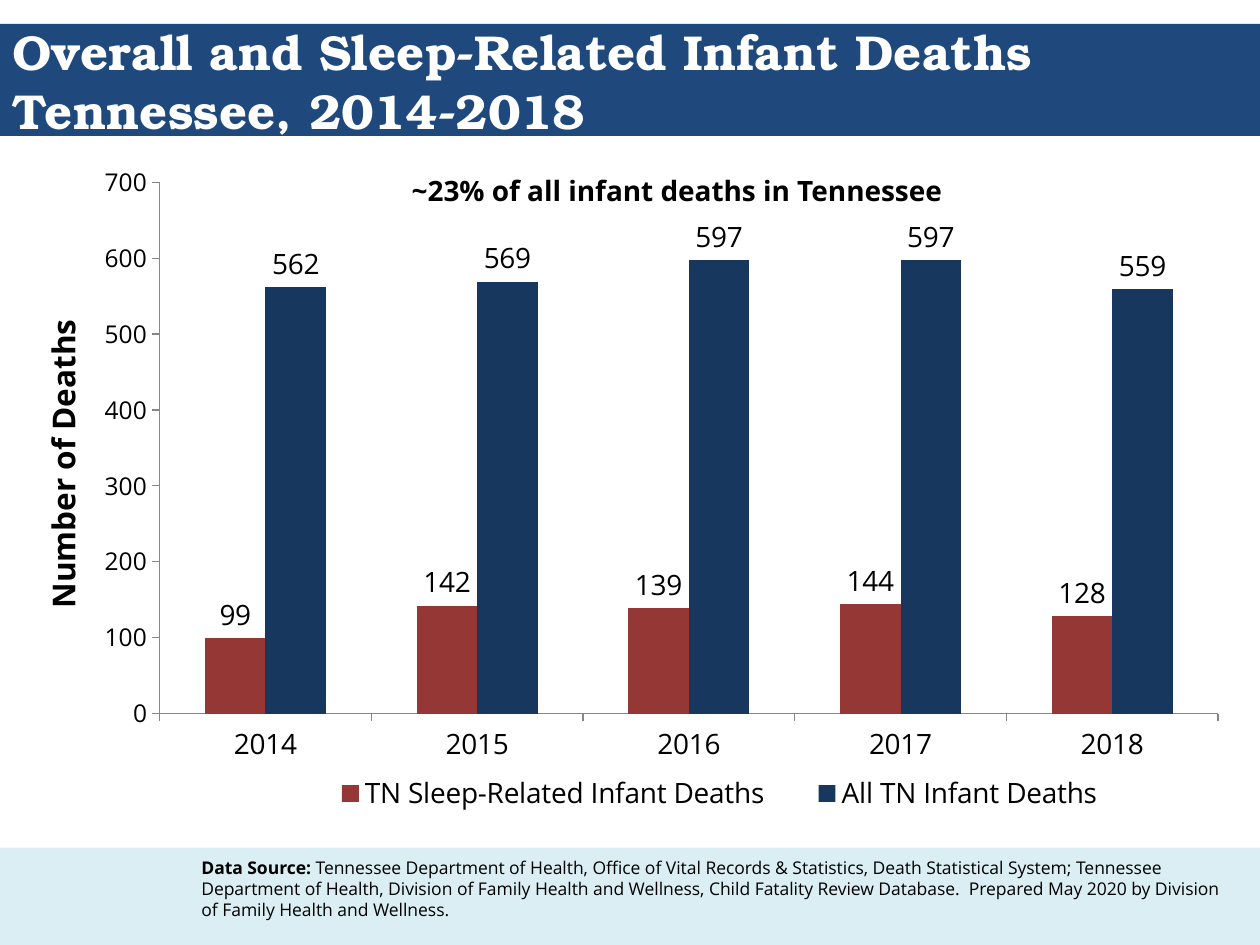
from dataclasses import dataclass

from lxml.etree import SubElement
from pptx import Presentation
from pptx.chart.data import CategoryChartData
from pptx.dml.color import RGBColor
from pptx.enum.chart import (XL_CHART_TYPE, XL_LABEL_POSITION,
                             XL_LEGEND_POSITION, XL_TICK_MARK)
from pptx.enum.shapes import MSO_SHAPE
from pptx.enum.text import MSO_ANCHOR
from pptx.oxml.ns import qn
from pptx.util import Cm, Pt


@dataclass(frozen=True)
class Theme:
    banner: str = "1F497D"
    footer: str = "DBEEF4"
    white: str = "FFFFFF"
    black: str = "000000"
    axis: str = "868686"
    sleep: str = "953735"
    overall: str = "17375E"
    heading: str = "TeX Gyre Bonum"
    body: str = "Open Sans"
    title_size: int = 28
    axis_title_size: int = 18
    label_size: int = 16
    tick_size: int = 14
    source_size: int = 10


THEME = Theme()
BREAK = "\v"

YEARS = ["2014", "2015", "2016", "2017", "2018"]
SERIES = [
    ("TN Sleep-Related Infant Deaths", [99, 142, 139, 144, 128], THEME.sleep),
    ("All TN Infant Deaths", [562, 569, 597, 597, 559], THEME.overall),
]


def style_font(font, size, name=THEME.body, bold=False, color=THEME.black):
    values = {"name": name, "size": Pt(size), "bold": bold}
    for key, value in values.items():
        setattr(font, key, value)
    font.color.rgb = RGBColor.from_string(color)


def add_band(slide, top, height, color):
    """Draw a plain strip across the full slide width."""
    s = slide.shapes.add_shape(MSO_SHAPE.RECTANGLE, 0, Cm(top), Cm(25.4), Cm(height))
    s.shadow.inherit = False
    s.fill.solid()
    s.fill.fore_color.rgb = RGBColor.from_string(color)
    s.line.fill.background()


def add_text(slide, box, runs, size, anchor=MSO_ANCHOR.TOP, **font):
    """Add one paragraph made of (text, bold) runs; BREAK starts a new line."""
    tf = slide.shapes.add_textbox(*(Cm(v) for v in box)).text_frame
    tf.word_wrap = True
    tf.vertical_anchor = anchor
    p = tf.paragraphs[0]
    for text, bold in runs:
        if text == BREAK:
            p.add_line_break()
            continue
        r = p.add_run()
        r.text = text
        style_font(r.font, size, bold=bold, **font)


def set_layout(parent, index, x, y, w, h, inner=False):
    """Place a chart part by fractions of the chart's size."""
    for old in parent.findall(qn("c:layout")):
        parent.remove(old)
    layout = SubElement(parent, qn("c:layout"))
    parent.insert(index, layout)
    manual = SubElement(layout, qn("c:manualLayout"))
    values = {"layoutTarget": "inner"} if inner else {}
    values |= {"xMode": "edge", "yMode": "edge", "x": x, "y": y, "w": w, "h": h}
    for tag, value in values.items():
        SubElement(manual, qn(f"c:{tag}")).set("val", str(value))


def style_axis(axis, size):
    values = {"has_major_gridlines": False, "major_tick_mark": XL_TICK_MARK.OUTSIDE,
              "minor_tick_mark": XL_TICK_MARK.NONE}
    for key, value in values.items():
        setattr(axis, key, value)
    style_font(axis.tick_labels.font, size)
    axis.format.line.color.rgb = RGBColor.from_string(THEME.axis)
    axis.format.line.width = Pt(0.75)


def style_series(series, color):
    series.format.fill.solid()
    series.format.fill.fore_color.rgb = RGBColor.from_string(color)
    labels = series.data_labels
    labels.show_value = True
    labels.position = XL_LABEL_POSITION.OUTSIDE_END
    style_font(labels.font, THEME.label_size)


def add_deaths_chart(slide, box):
    data = CategoryChartData()
    data.categories = YEARS
    for name, values, _ in SERIES:
        data.add_series(name, values)
    chart = slide.shapes.add_chart(
        XL_CHART_TYPE.COLUMN_CLUSTERED, *(Cm(v) for v in box), data).chart
    chart.has_title = False
    style_font(chart.font, THEME.source_size)

    plot = chart.plots[0]
    plot.vary_by_categories = False
    plot.gap_width = 150
    plot.overlap = 0
    for series, (_, _, color) in zip(plot.series, SERIES):
        style_series(series, color)

    style_axis(chart.category_axis, THEME.label_size)
    axis = chart.value_axis
    style_axis(axis, THEME.tick_size)
    scale = {"minimum_scale": 0, "maximum_scale": 700, "major_unit": 100}
    for key, value in scale.items():
        setattr(axis, key, value)
    r = axis.axis_title.text_frame.paragraphs[0].add_run()
    r.text = "Number of Deaths"
    style_font(r.font, THEME.axis_title_size, bold=True)

    chart.has_legend = True
    legend = chart.legend
    legend.position = XL_LEGEND_POSITION.BOTTOM
    legend.include_in_layout = False
    style_font(legend.font, THEME.label_size)
    plot_area = chart.element.find(f".//{qn('c:plotArea')}")
    legend_part = chart.element.find(f".//{qn('c:legend')}")
    set_layout(plot_area, 0, 0.106, 0.068, 0.877, 0.778, inner=True)
    set_layout(legend_part, 1, 0.22, 0.93, 0.7, 0.07)


def main():
    prs = Presentation()
    prs.slide_width, prs.slide_height = Cm(25.4), Cm(19.05)
    slide = prs.slides.add_slide(prs.slide_layouts[6])

    add_band(slide, 0.48, 2.26, THEME.banner)
    add_band(slide, 17.09, 1.96, THEME.footer)
    add_text(slide, (0, 0.48, 25.4, 2.29),
             [("Overall and Sleep-Related Infant Deaths", True), (BREAK, True),
              ("Tennessee, 2014-2018", True)],
             THEME.title_size, MSO_ANCHOR.MIDDLE, name=THEME.heading, color=THEME.white)
    add_text(slide, (3.81, 17.15, 21.16, 1.96),
             [("Data Source: ", True),
              ("Tennessee Department of Health, Office of Vital Records & Statistics, "
               "Death Statistical System; Tennessee Department of Health, Division of "
               "Family Health and Wellness, Child Fatality Review Database.  Prepared "
               "May 2020 by Division of Family Health and Wellness.", False)],
             THEME.source_size)
    add_text(slide, (8.05, 3.38, 11.43, 0.94),
             [("~23% of all infant deaths in Tennessee", True)], THEME.label_size)
    add_deaths_chart(slide, (0.64, 2.74, 24.33, 13.77))
    prs.save("out.pptx")


if __name__ == "__main__":
    main()
